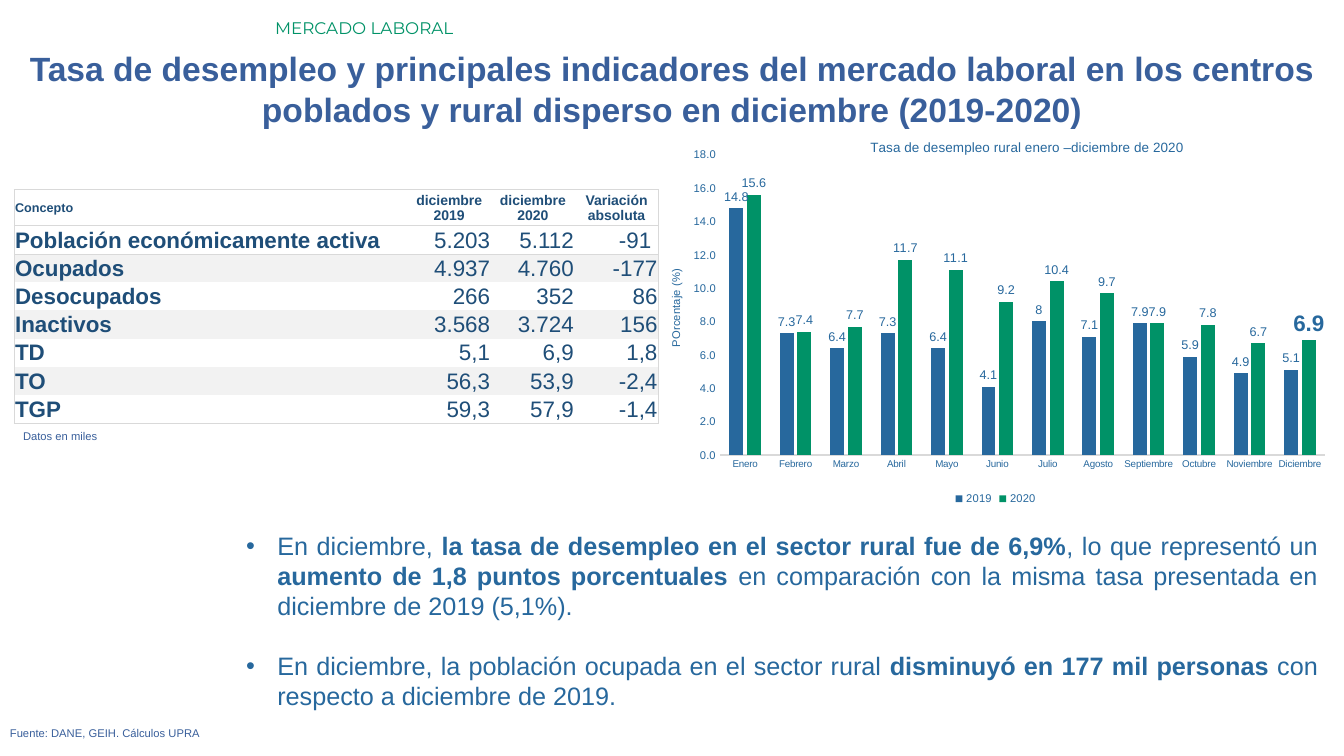
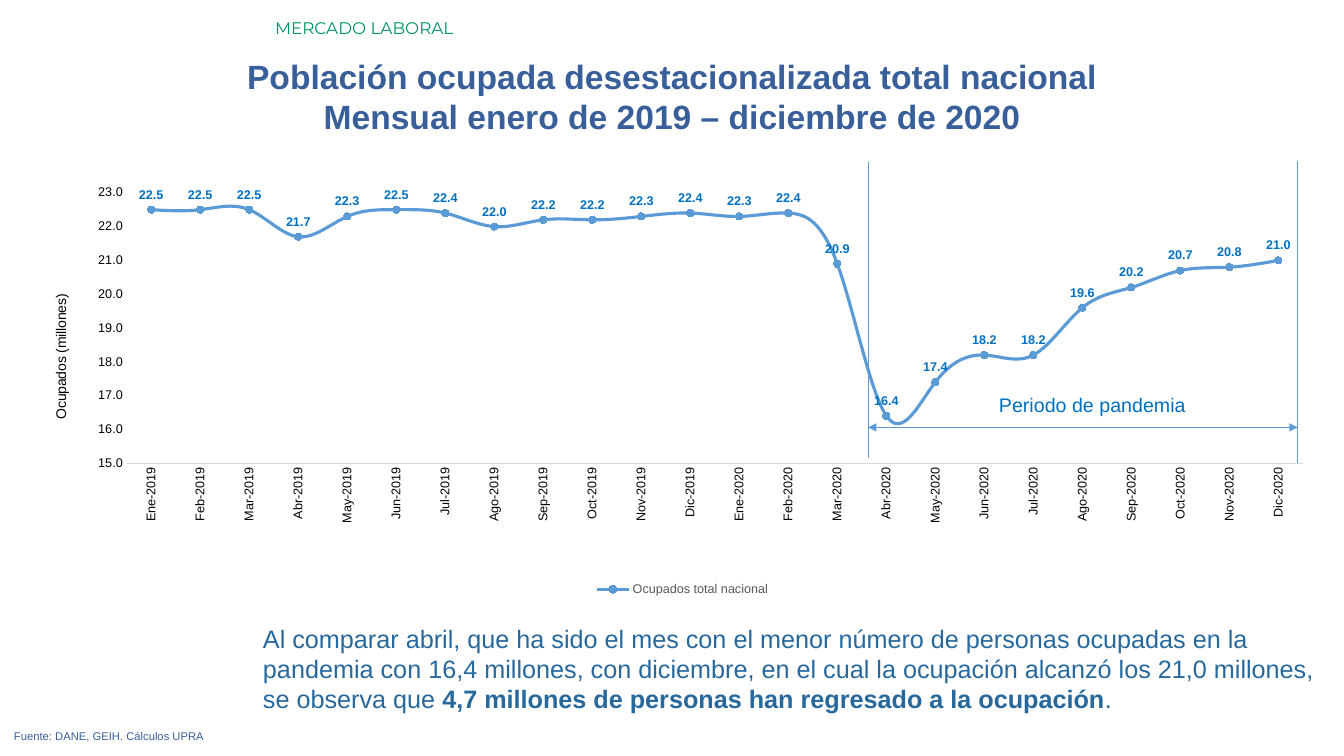
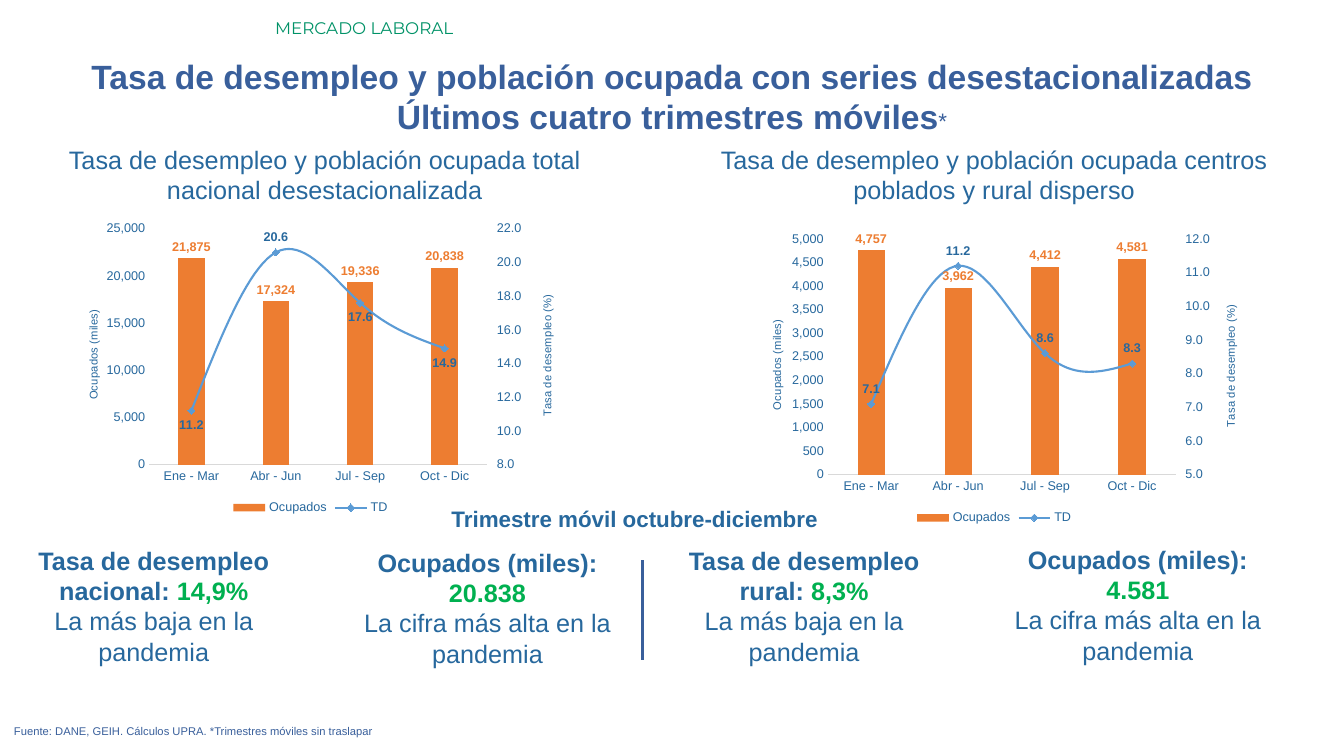
from dataclasses import dataclass
from typing import Optional

from pptx import Presentation
from pptx.chart.axis import ValueAxis
from pptx.chart.data import CategoryChartData
from pptx.dml.color import RGBColor
from pptx.enum.chart import (XL_CHART_TYPE, XL_LABEL_POSITION, XL_LEGEND_POSITION,
                             XL_MARKER_STYLE, XL_TICK_MARK)
from pptx.enum.shapes import MSO_CONNECTOR
from pptx.enum.text import MSO_ANCHOR, MSO_AUTO_SIZE, PP_ALIGN
from pptx.oxml import parse_xml
from pptx.oxml.ns import nsdecls, qn
from pptx.util import Emu, Pt

EMU_PER_PX = 9144
NAVY = RGBColor(0x39, 0x5F, 0x9B)
BLUE = RGBColor(0x27, 0x68, 0x9D)
INK = RGBColor(0x1F, 0x4E, 0x78)
GREEN = RGBColor(0x00, 0x92, 0x67)
LIME = RGBColor(0x00, 0xB0, 0x50)
SKY = RGBColor(0x5B, 0x9B, 0xD5)
AZURE = RGBColor(0x00, 0x70, 0xC0)
ORANGE = RGBColor(0xED, 0x7D, 0x31)
RULE = RGBColor(0xD9, 0xD9, 0xD9)
STRIPE = RGBColor(0xF2, 0xF2, 0xF2)
GRAY = RGBColor(0x59, 0x59, 0x59)
WHITE = RGBColor(0xFF, 0xFF, 0xFF)
BLACK = RGBColor(0, 0, 0)

ABOVE, BELOW = XL_LABEL_POSITION.ABOVE, XL_LABEL_POSITION.BELOW
OUTSIDE = XL_LABEL_POSITION.OUTSIDE_END


@dataclass(frozen=True)
class Span:
    text: str
    bold: bool = False
    color: Optional[RGBColor] = None
    size: Optional[float] = None


@dataclass(frozen=True)
class Box:
    left: int
    top: int
    width: int
    height: int


@dataclass(frozen=True)
class AxisSpec:
    title: str
    title_size: int
    title_at: tuple[float, float]
    low: float
    high: float
    step: float
    fmt: str
    tick_size: int = 9
    color: RGBColor = BLUE


@dataclass(frozen=True)
class Quarterly:
    heading: str
    heading_left: int
    box: Box
    plot: tuple[float, float, float, float]
    employed: list[int]
    rate: list[float]
    rate_position: XL_LABEL_POSITION
    employed_axis: tuple[int, int]
    rate_axis: tuple[int, int, int]


@dataclass(frozen=True)
class Figure:
    box: Box
    lines: list[list[Span]]


def px(n: int) -> Emu:
    return Emu(n * EMU_PER_PX)


def place(sp, box: Box) -> None:
    sp.left, sp.top, sp.width, sp.height = map(px, (box.left, box.top, box.width, box.height))


def style(font, size: float, color: RGBColor, bold: bool = False, name: str = "Arial") -> None:
    font.name, font.size, font.bold = name, Pt(size), bold
    font.color.rgb = color


def write(tf, paragraphs: list[list[Span]], size: float, color: RGBColor,
          align=PP_ALIGN.LEFT, name: str = "Arial", gap: float = 0) -> None:
    tf.word_wrap = True
    tf.auto_size = MSO_AUTO_SIZE.NONE
    tf.vertical_anchor = MSO_ANCHOR.TOP
    for i, spans in enumerate(paragraphs):
        p = tf.paragraphs[0] if i == 0 else tf.add_paragraph()
        p.alignment = align
        p.space_before = Pt(gap if i else 0)
        for span in spans:
            r = p.add_run()
            r.text = span.text
            style(r.font, span.size or size, span.color or color, span.bold, name)


def add_text(s, box: Box, paragraphs: list[list[Span]], size: float, color: RGBColor = BLUE,
             align=PP_ALIGN.LEFT, name: str = "Arial") -> None:
    sp = s.shapes.add_textbox(0, 0, 0, 0)
    place(sp, box)
    write(sp.text_frame, paragraphs, size, color, align, name)


def add_page(prs, layout: int, title_top: int, title: list[list[Span]],
             source: str, source_at: tuple[int, int]):
    s = prs.slides.add_slide(prs.slide_layouts[layout])
    place(s.shapes.title, Box(0, title_top, 1333, 91))
    write(s.shapes.title.text_frame, title, 24, NAVY, PP_ALIGN.CENTER)
    add_text(s, Box(263, 13, 1070, 30), [[Span("MERCADO LABORAL")]], 12, GREEN, name="Montserrat")
    add_text(s, Box(*source_at, 1291, 24), [[Span(source)]], 8, NAVY)
    return s


def add_line(s, start: tuple[int, int], end: tuple[int, int], color: RGBColor,
             width: float, arrows: bool = False) -> None:
    line = s.shapes.add_connector(MSO_CONNECTOR.STRAIGHT, *map(px, start + end))
    line.line.color.rgb = color
    line.line.width = Pt(width)
    if arrows:
        ln = line.line._get_or_add_ln()
        for tag in ("headEnd", "tailEnd"):
            ln.append(parse_xml(f'<a:{tag} {nsdecls("a")} type="triangle"/>'))
    line._element.spPr.append(parse_xml(f'<a:effectLst {nsdecls("a")}/>'))


def set_layout(parent, index: int, x: float, y: float, w: float = 0, h: float = 0) -> None:
    for old in parent.findall(qn("c:layout")):
        parent.remove(old)
    target = '<c:layoutTarget val="inner"/>' if w else ""
    size = f'<c:w val="{w}"/><c:h val="{h}"/>' if w else ""
    parent.insert(index, parse_xml(
        f'<c:layout {nsdecls("c")}><c:manualLayout>{target}<c:xMode val="edge"/>'
        f'<c:yMode val="edge"/><c:x val="{x}"/><c:y val="{y}"/>{size}'
        f'</c:manualLayout></c:layout>'))


def set_title(title, text: str, size: float, color: RGBColor, at: tuple[float, float]) -> None:
    title.text_frame.text = text
    style(title.text_frame.paragraphs[0].runs[0].font, size, color)
    set_layout(title._element, 1, *at)


def format_value_axis(axis, spec: AxisSpec) -> None:
    axis.has_major_gridlines = False
    axis.minimum_scale, axis.maximum_scale, axis.major_unit = spec.low, spec.high, spec.step
    axis.major_tick_mark = XL_TICK_MARK.NONE
    axis.format.line.fill.background()
    axis.tick_labels.number_format = spec.fmt
    axis.tick_labels.number_format_is_linked = False
    style(axis.tick_labels.font, spec.tick_size, spec.color)
    set_title(axis.axis_title, spec.title, spec.title_size, spec.color, spec.title_at)
    body = axis.axis_title.text_frame._txBody.bodyPr
    body.set("rot", "-5400000")
    body.set("vert", "horz")


def label_series(ser, position, size: float, color: RGBColor, fmt: str, bold: bool = False) -> None:
    labels = ser.data_labels
    labels.show_value = True
    labels.number_format = fmt
    labels.number_format_is_linked = False
    labels.position = position
    style(labels.font, size, color, bold)


def label_point(ser, index: int, position, size: float, color: RGBColor) -> None:
    label = ser.points[index].data_label
    style(label.font, size, color, True)
    label.position = position


def format_line_series(ser, width: float, marker) -> None:
    ser.smooth = True
    ser.format.line.color.rgb = SKY
    ser.format.line.width = Pt(width)
    ser.marker.style = marker
    ser.marker.size = 5
    ser.marker.format.fill.solid()
    ser.marker.format.fill.fore_color.rgb = SKY
    ser.marker.format.line.color.rgb = SKY


def add_chart(s, kind, box: Box, categories: list[str], series: dict[str, list],
              plot: tuple[float, float, float, float], axis: AxisSpec,
              category_size: int, legend_size: int, legend_color: RGBColor = BLUE):
    data = CategoryChartData()
    data.categories = categories
    for name, values in series.items():
        data.add_series(name, values)
    chart = s.shapes.add_chart(kind, px(box.left), px(box.top), px(box.width),
                               px(box.height), data).chart
    style(chart.font, 10, axis.color)
    chart.has_title = False
    chart.has_legend = True
    chart.legend.position = XL_LEGEND_POSITION.BOTTOM
    chart.legend.include_in_layout = False
    style(chart.legend.font, legend_size, legend_color)
    chart.plots[0].vary_by_categories = False
    format_value_axis(chart.value_axis, axis)
    cat = chart.category_axis
    cat.major_tick_mark = XL_TICK_MARK.NONE
    cat.format.line.color.rgb = RULE
    cat.format.line.width = Pt(0.75)
    style(cat.tick_labels.font, category_size, axis.color)
    space = chart._chartSpace
    set_layout(space.chart.plotArea, 0, *plot)
    space.chart.addnext(parse_xml(
        f'<c:spPr {nsdecls("c", "a")}><a:noFill/><a:ln><a:noFill/></a:ln></c:spPr>'))
    return chart


def format_bars(chart, gap: int, colors: list[RGBColor]) -> None:
    bars = chart.plots[0]
    bars.gap_width, bars.overlap = gap, -27
    for ser, color in zip(bars.series, colors):
        ser.format.fill.solid()
        ser.format.fill.fore_color.rgb = color


def move_to_right_axis(chart, spec: AxisSpec):
    area = chart._chartSpace.chart.plotArea
    bars = area.find(qn("c:barChart"))
    ser = bars.findall(qn("c:ser"))[1]
    for flag in ser.findall(qn("c:invertIfNegative")):
        ser.remove(flag)
    line = parse_xml(
        f'<c:lineChart {nsdecls("c")}><c:grouping val="standard"/><c:varyColors val="0"/>'
        '<c:marker val="1"/><c:axId val="50010"/><c:axId val="50020"/></c:lineChart>')
    line.insert(2, ser)
    bars.addnext(line)
    right = parse_xml(
        f'<c:valAx {nsdecls("c")}><c:axId val="50020"/><c:scaling/><c:delete val="0"/>'
        '<c:axPos val="r"/><c:majorTickMark val="out"/><c:minorTickMark val="none"/>'
        '<c:tickLblPos val="nextTo"/><c:crossAx val="50010"/><c:crosses val="max"/></c:valAx>')
    hidden = parse_xml(
        f'<c:catAx {nsdecls("c")}><c:axId val="50010"/><c:scaling/><c:delete val="1"/>'
        '<c:axPos val="b"/><c:crossAx val="50020"/><c:crosses val="autoZero"/></c:catAx>')
    area.find(qn("c:valAx")).addnext(right)
    right.addnext(hidden)
    axis = ValueAxis(right)
    format_value_axis(axis, spec)
    axis.major_tick_mark = XL_TICK_MARK.OUTSIDE
    return chart.plots[1].series[0]


def set_borders(cell, sides: dict[str, bool]) -> None:
    tc_pr = cell._tc.get_or_add_tcPr()
    for side, shown in sides.items():
        paint = f'<a:solidFill><a:srgbClr val="{RULE}"/></a:solidFill>' if shown else "<a:noFill/>"
        tc_pr.append(parse_xml(f'<a:ln{side} {nsdecls("a")} w="6350">{paint}</a:ln{side}>'))


def add_indicators(s) -> None:
    rows = [
        ("Concepto", "diciembre 2019", "diciembre 2020", "Variación absoluta"),
        ("Población económicamente activa", "5.203", "5.112", "-91 "),
        ("Ocupados", "4.937", "4.760", "-177"),
        ("Desocupados", "266", "352", "86"),
        ("Inactivos", "3.568", "3.724", "156"),
        ("TD", "5,1", "6,9", "1,8"),
        ("TO", "56,3", "53,9", "-2,4"),
        ("TGP", "59,3", "57,9", "-1,4"),
    ]
    ruled = {0, 1, 2, len(rows)}
    table = s.shapes.add_table(len(rows), 4, px(14), px(188), px(639), px(232)).table
    table.first_row = table.horz_banding = False
    for column, width in zip(table.columns, (390, 83, 83, 83)):
        column.width = px(width)
    for i, row in enumerate(rows):
        table.rows[i].height = px(28 if i else 36)
        for j, text in enumerate(row):
            cell = table.cell(i, j)
            cell.margin_left = cell.margin_right = cell.margin_top = px(1)
            cell.margin_bottom = 0
            cell.vertical_anchor = MSO_ANCHOR.MIDDLE
            set_borders(cell, {"L": j == 0, "R": j == 3, "T": i in ruled, "B": i + 1 in ruled})
            cell.fill.solid()
            cell.fill.fore_color.rgb = STRIPE if i and i % 2 == 0 else WHITE
            p = cell.text_frame.paragraphs[0]
            p.text = text
            if j:
                p.alignment = PP_ALIGN.RIGHT if i else PP_ALIGN.CENTER
            size = 16 if i else (10 if j else 9)
            style(p.runs[0].font, size, INK, i == 0 or j == 0)


def build_rural(prs) -> None:
    s = add_page(prs, 1, 43, [[Span("Tasa de desempleo y principales indicadores del mercado laboral en los "
                                    "centros poblados y rural disperso en diciembre (2019-2020)", True)]],
                 "Fuente: DANE, GEIH. Cálculos UPRA", (0, 716))
    add_indicators(s)
    add_text(s, Box(13, 421, 625, 24), [[Span("Datos en miles")]], 8, NAVY)
    months = ["Enero", "Febrero", "Marzo", "Abril", "Mayo", "Junio", "Julio", "Agosto",
              "Septiembre", "Octubre", "Noviembre", "Diciembre"]
    rates = {"2019": [14.8, 7.3, 6.4, 7.3, 6.4, 4.1, 8, 7.1, 7.9, 5.9, 4.9, 5.1],
             "2020": [15.6, 7.4, 7.7, 11.7, 11.1, 9.2, 10.4, 9.7, 7.9, 7.8, 6.7, 6.9]}
    axis = AxisSpec("POrcentaje (%)", 8, (0.01, 0.37), 0, 18, 2, "#,##0.0", 8)
    chart = add_chart(s, XL_CHART_TYPE.COLUMN_CLUSTERED, Box(654, 123, 667, 382), months, rates,
                      (0.09, 0.08, 0.9, 0.78), axis, 7, 8)
    chart.has_title = True
    set_title(chart.chart_title, "Tasa de desempleo rural enero –diciembre de 2020", 9.6, BLUE, (0.31, 0.03))
    format_bars(chart, 136, [BLUE, GREEN])
    for ser in chart.plots[0].series:
        label_series(ser, OUTSIDE, 9, BLUE, "General")
    label_point(chart.plots[0].series[1], 11, OUTSIDE, 16, BLUE)
    body = s.placeholders[1]
    place(body, Box(234, 521, 1083, 192))
    write(body.text_frame, [
        [Span("En diciembre, "), Span("la tasa de desempleo en el sector rural fue de 6,9%", True),
         Span(", lo que representó un "), Span("aumento de 1,8 puntos porcentuales", True),
         Span(" en comparación con la misma tasa presentada en diciembre de 2019 (5,1%).")],
        [Span("En diciembre, la población ocupada en el sector rural "),
         Span("disminuyó en 177 mil personas ", True), Span("con respecto a diciembre de 2019.")],
    ], 18, BLUE, PP_ALIGN.JUSTIFY, gap=21)
    for p in body.text_frame.paragraphs:
        p_pr = p._p.get_or_add_pPr()
        p_pr.set("marL", str(px(31)))
        p_pr.set("indent", str(-px(31)))


def build_national(prs) -> None:
    s = add_page(prs, 5, 50, [[Span("Población ocupada desestacionalizada total nacional", True)],
                              [Span("Mensual enero de 2019 – diciembre de 2020", True)]],
                 "Fuente: DANE, GEIH. Cálculos UPRA", (4, 719))
    names = "Ene Feb Mar Abr May Jun Jul Ago Sep Oct Nov Dic".split()
    months = [f"{name}-{year}" for year in (2019, 2020) for name in names]
    employed = [22.5, 22.5, 22.5, 21.7, 22.3, 22.5, 22.4, 22, 22.2, 22.2, 22.3, 22.4,
                22.3, 22.4, 20.9, 16.4, 17.4, 18.2, 18.2, 19.6, 20.2, 20.7, 20.8, 21]
    axis = AxisSpec("Ocupados (millones)", 10, (0.01, 0.28), 15, 23, 1, "0.0", color=BLACK)
    chart = add_chart(s, XL_CHART_TYPE.LINE_MARKERS, Box(36, 170, 1282, 426), months,
                      {"Ocupados total nacional": employed}, (0.07, 0.05, 0.91, 0.63), axis, 9, 9, GRAY)
    chart.category_axis._element.txPr.bodyPr.set("rot", "-5400000")
    ser = chart.plots[0].series[0]
    format_line_series(ser, 2.25, XL_MARKER_STYLE.CIRCLE)
    label_series(ser, ABOVE, 9, AZURE, "0.0", True)
    add_line(s, (861, 161), (861, 454), SKY, 0.5)
    add_line(s, (1287, 160), (1287, 459), SKY, 0.5)
    add_line(s, (861, 424), (1287, 424), SKY, 0.5, arrows=True)
    add_text(s, Box(981, 385, 263, 34), [[Span("Periodo de pandemia")]], 14, AZURE)
    add_text(s, Box(251, 613, 1071, 101), [[
        Span("Al comparar abril, que ha sido el mes con el menor número de personas ocupadas en la pandemia con "
             "16,4 millones, con diciembre, en el cual la ocupación alcanzó los 21,0 millones, se observa que "),
        Span("4,7 millones de personas han regresado a la ocupación", True), Span(".")]], 18)


def add_quarterly(s, q: Quarterly):
    add_text(s, Box(q.heading_left, 138, 570, 71), [[Span(q.heading)]], 18, align=PP_ALIGN.CENTER)
    employed_axis = AxisSpec("Ocupados (miles)", 8, (0.05, 0.3), 0, *q.employed_axis, "#,##0")
    rate_axis = AxisSpec("Tasa de desempleo (%)", 8, (0.95, 0.25), *q.rate_axis, "0.0")
    chart = add_chart(s, XL_CHART_TYPE.COLUMN_CLUSTERED, q.box,
                      ["Ene - Mar", "Abr - Jun", "Jul - Sep", "Oct - Dic"],
                      {"Ocupados": q.employed, "TD": q.rate}, q.plot, employed_axis, 9, 9)
    rate = move_to_right_axis(chart, rate_axis)
    format_bars(chart, 219, [ORANGE])
    label_series(chart.plots[0].series[0], OUTSIDE, 9, ORANGE, "#,##0", True)
    format_line_series(rate, 1.5, XL_MARKER_STYLE.DIAMOND)
    label_series(rate, q.rate_position, 9, BLUE, "0.0", True)
    return rate


def build_quarters(prs) -> None:
    s = add_page(prs, 5, 50, [
        [Span("Tasa de desempleo y población ocupada con series desestacionalizadas", True)],
        [Span("Últimos cuatro trimestres móviles", True), Span("*", size=16)]],
        "Fuente: DANE, GEIH. Cálculos UPRA. *Trimestres móviles sin traslapar", (4, 714))
    national = add_quarterly(s, Quarterly(
        "Tasa de desempleo y población ocupada total nacional desestacionalizada", 37,
        Box(58, 215, 500, 300), (0.18, 0.04, 0.67, 0.78), [21875, 17324, 19336, 20838],
        [11.2, 20.6, 17.6, 14.9], BELOW, (25000, 5000), (8, 22, 2)))
    label_point(national, 1, ABOVE, 9, BLUE)
    add_quarterly(s, Quarterly(
        "Tasa de desempleo y población ocupada centros poblados y rural disperso", 701,
        Box(736, 225, 500, 300), (0.17, 0.04, 0.69, 0.78), [4757, 3962, 4412, 4581],
        [7.1, 11.2, 8.6, 8.3], ABOVE, (5000, 500), (5, 12, 1)))
    add_text(s, Box(438, 496, 457, 37), [[Span("Trimestre móvil octubre-diciembre", True)]], 16)
    add_line(s, (637, 556), (637, 655), NAVY, 2.25)
    lowest = [Span("La más baja en la pandemia")]
    highest = [Span("La cifra más alta en la pandemia")]
    employed = [Span("Ocupados (miles):", True)]
    figures = [
        Figure(Box(13, 536, 279, 131), [
            [Span("Tasa de desempleo nacional: ", True), Span("14,9%", True, LIME)], lowest]),
        Figure(Box(308, 538, 351, 131), [employed, [Span("20.838", True, LIME)], highest]),
        Figure(Box(658, 536, 279, 131), [
            [Span("Tasa de desempleo rural: ", True), Span("8,3%", True, LIME)], lowest]),
        Figure(Box(953, 535, 351, 131), [employed, [Span("4.581", True, LIME)], highest]),
    ]
    for figure in figures:
        add_text(s, figure.box, figure.lines, 18, align=PP_ALIGN.CENTER)


def main() -> None:
    prs = Presentation()
    prs.slide_width, prs.slide_height = px(1333), px(750)
    build_rural(prs)
    build_national(prs)
    build_quarters(prs)
    prs.save("out.pptx")


if __name__ == "__main__":
    main()
